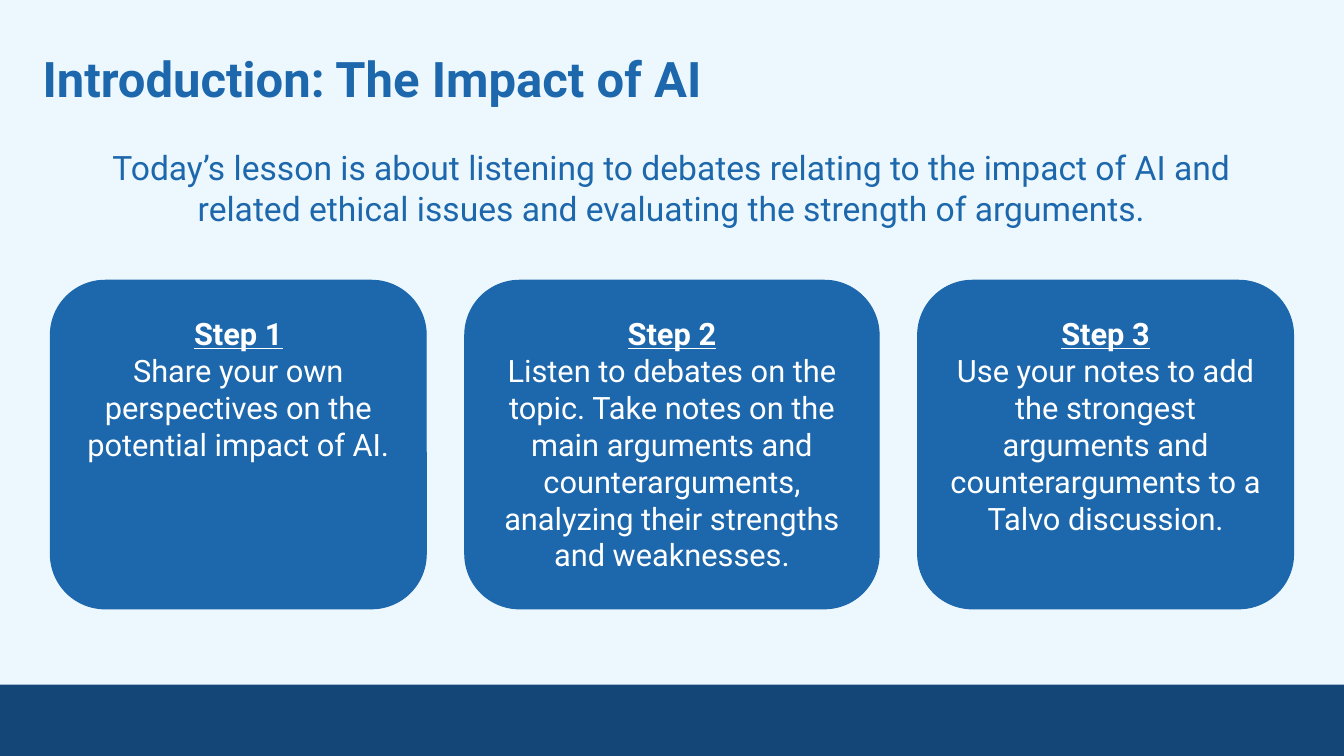
from dataclasses import dataclass

from pptx import Presentation
from pptx.dml.color import RGBColor as RGB
from pptx.enum.shapes import MSO_SHAPE as Kind
from pptx.enum.text import MSO_ANCHOR as Anchor, MSO_AUTO_SIZE as Fit, PP_ALIGN as Align
from pptx.shapes.autoshape import Shape
from pptx.slide import Slide
from pptx.text.text import TextFrame, _Paragraph as Para
from pptx.util import Pt

WIDE, HIGH = 960, 540
COLORS = {"back": "ECF8FE", "blue": "1D67AC", "navy": "144777", "white": "FFFFFF"}
FACE = "Roboto"
LEFT, TOP, TALL, GAP = 36, 200.2, 234.7, 27.5


@dataclass
class Step:
    head: str
    body: str
    width: float


STEPS = [
    Step("Step 1", "Share your own perspectives on the potential impact of AI.", 268.5),
    Step("Step 2", "Listen to debates on the topic. Take notes on the main arguments and "
         "counterarguments, analyzing their strengths and weaknesses.", 296),
    Step("Step 3", "Use your notes to add the strongest arguments and "
         "counterarguments to a Talvo discussion.", 268.5),
]


def color(name: str) -> RGB:
    return RGB.from_string(COLORS[name])


def style(para: Para, text: str, size: float, tint: str,
          align: Align = Align.CENTER, bold: bool = False, under: bool = False) -> None:
    para.text = text
    para.alignment = align
    font = para.font
    font.name, font.size, font.bold, font.underline = FACE, Pt(size), bold, under
    font.color.rgb = color(tint)


def set_frame(frame: TextFrame, side: float, top: float) -> None:
    frame.word_wrap = True
    frame.auto_size = Fit.NONE
    frame.vertical_anchor = Anchor.TOP
    frame.margin_left = frame.margin_right = Pt(side)
    frame.margin_top = frame.margin_bottom = Pt(top)


def add_block(slide: Slide, kind: Kind, left: float, top: float,
              width: float, height: float, tint: str) -> Shape:
    block = slide.shapes.add_shape(kind, Pt(left), Pt(top), Pt(width), Pt(height))
    block.shadow.inherit = False
    block.fill.solid()
    block.fill.fore_color.rgb = color(tint)
    block.line.fill.background()
    return block


def add_title(slide: Slide) -> None:
    title = slide.shapes.title
    title.left, title.top, title.width, title.height = Pt(21), Pt(25), Pt(878), Pt(62)
    set_frame(title.text_frame, 9.4, 9.4)
    style(title.text_frame.paragraphs[0], "Introduction: The Impact of AI",
          35, "blue", Align.LEFT, bold=True)


def add_intro(slide: Slide) -> None:
    box = slide.shapes.add_textbox(Pt(65.5), Pt(98), Pt(828), Pt(131))
    set_frame(box.text_frame, 7.2, 7.2)
    style(box.text_frame.paragraphs[0],
          "Today’s lesson is about listening to debates relating to the impact of AI "
          "and related ethical issues and evaluating the strength of arguments.",
          24, "blue")


def add_card(slide: Slide, step: Step, left: float) -> None:
    card = add_block(slide, Kind.ROUNDED_RECTANGLE, left, TOP, step.width, TALL, "blue")
    card.line.color.rgb = color("blue")
    card.line.width = Pt(0.75)
    frame = card.text_frame
    set_frame(frame, 7.2, 13)
    style(frame.paragraphs[0], step.head, 22, "white", bold=True, under=True)
    style(frame.add_paragraph(), step.body, 22, "white")


def main() -> None:
    deck = Presentation()
    deck.slide_width, deck.slide_height = Pt(WIDE), Pt(HIGH)
    slide = deck.slides.add_slide(deck.slide_layouts[5])
    slide.background.fill.solid()
    slide.background.fill.fore_color.rgb = color("back")

    add_block(slide, Kind.RECTANGLE, 0, 489, WIDE, HIGH - 489, "navy")
    add_title(slide)
    add_intro(slide)
    left = LEFT
    for step in STEPS:
        add_card(slide, step, left)
        left += step.width + GAP

    deck.save("out.pptx")


if __name__ == "__main__":
    main()
